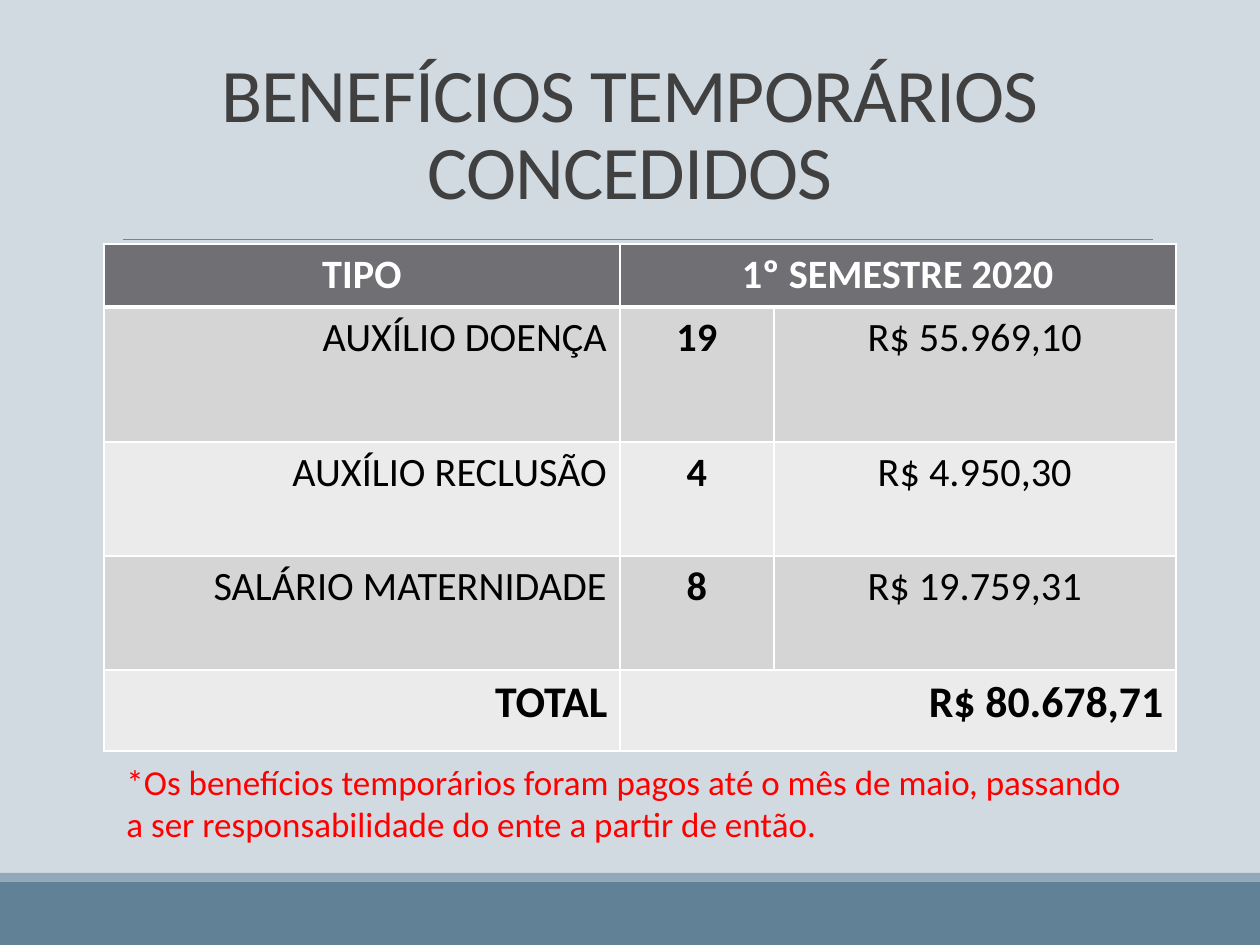
from pptx import Presentation
from pptx.dml.color import RGBColor
from pptx.enum.shapes import MSO_CONNECTOR as CONNECTOR, MSO_SHAPE as SHAPE
from pptx.enum.text import MSO_ANCHOR as ANCHOR, MSO_AUTO_SIZE as AUTO_SIZE, PP_ALIGN as ALIGN
from pptx.oxml.ns import qn
from pptx.util import Emu, Pt
from lxml.etree import SubElement

PX = 914400 // 126
FONT = "Calibri"
BACKGROUND = RGBColor(0xD1, 0xD9, 0xE1)
BAND = RGBColor(0x61, 0x81, 0x97)
BAND_EDGE = RGBColor(0x92, 0xA9, 0xB9)
RULE = RGBColor(0x80, 0x80, 0x80)
TITLE = RGBColor(0x40, 0x40, 0x40)
HEADER = RGBColor(0x6F, 0x6F, 0x74)
ROW_DARK = RGBColor(0xD5, 0xD5, 0xD6)
ROW_LIGHT = RGBColor(0xEB, 0xEB, 0xEB)
WHITE = RGBColor(0xFF, 0xFF, 0xFF)
BLACK = RGBColor(0, 0, 0)
RED = RGBColor(0xFF, 0, 0)


def box(*lengths):
    return [Emu(length * PX) for length in lengths]


def format_text(paragraph, size, color, bold=False, align=ALIGN.LEFT):
    font = paragraph.font
    font.name, font.size, font.bold = FONT, Pt(size), bold
    font.color.rgb = color
    paragraph.alignment = align


presentation = Presentation()
presentation.slide_width, presentation.slide_height = box(1260, 945)
slide = presentation.slides.add_slide(presentation.slide_layouts[5])
slide.background.fill.solid()
slide.background.fill.fore_color.rgb = BACKGROUND

# Footer bands
for top, height, color in [(882, 63, BAND), (873, 9, BAND_EDGE)]:
    band = slide.shapes.add_shape(SHAPE.RECTANGLE, *box(0, top, 1260, height))
    band.shadow.inherit = False
    band.fill.solid()
    band.fill.fore_color.rgb = color
    band.line.fill.background()

# Rule under the title
rule = slide.shapes.add_connector(CONNECTOR.STRAIGHT, *box(123, 239, 1153, 239))
rule.line.color.rgb = RULE
rule.line.width = Pt(0.5)
SubElement(rule._element.spPr, qn("a:effectLst"))

# Title
title = slide.shapes.title
title.left, title.top, title.width, title.height = box(0, 125, 1260, 96)
title.text_frame.auto_size = AUTO_SIZE.NONE
title.text_frame.vertical_anchor = ANCHOR.BOTTOM
paragraph = title.text_frame.paragraphs[0]
paragraph.text = "BENEFÍCIOS TEMPORÁRIOS\vCONCEDIDOS"
format_text(paragraph, 43.2, TITLE, align=ALIGN.CENTER)
paragraph.line_spacing = 0.85
for run in paragraph.runs:
    run.font._element.set("spc", "-50")

# Benefits table
ROWS = [
    ("TIPO", "1º SEMESTRE 2020", ""),
    ("AUXÍLIO DOENÇA", "19", "R$ 55.969,10"),
    ("AUXÍLIO RECLUSÃO", "4", "R$ 4.950,30"),
    ("SALÁRIO MATERNIDADE", "8", "R$ 19.759,31"),
    ("TOTAL", "R$ 80.678,71", ""),
]
COLUMN_WIDTHS = [516, 154, 402]
ROW_HEIGHTS = [63, 135, 114, 114, 81]
LAST = len(ROWS) - 1
table = slide.shapes.add_table(
    len(ROWS), len(COLUMN_WIDTHS),
    *box(104, 244, sum(COLUMN_WIDTHS), sum(ROW_HEIGHTS))).table
table.horz_banding = False
for column, width in zip(table.columns, COLUMN_WIDTHS):
    column.width = Emu(width * PX)
for row, height in zip(table.rows, ROW_HEIGHTS):
    row.height = Emu(height * PX)
for r in (0, LAST):
    table.cell(r, 1).merge(table.cell(r, 2))

for r, texts in enumerate(ROWS):
    for c, text in enumerate(texts):
        cell = table.cell(r, c)
        properties = cell._tc.get_or_add_tcPr()
        for side in "LRTB":
            thick = (r, side) in [(0, "B"), (1, "T")]
            border = SubElement(properties, qn(f"a:ln{side}"), w=str(Pt(3 if thick else 1)))
            fill = SubElement(border, qn("a:solidFill"))
            SubElement(fill, qn("a:srgbClr"), val=str(WHITE))
        cell.fill.solid()
        cell.fill.fore_color.rgb = HEADER if r == 0 else ROW_DARK if r % 2 else ROW_LIGHT
        if not text:
            continue
        paragraph = cell.text_frame.paragraphs[0]
        paragraph.text = text
        right = r > 0 and (c == 0 or r == LAST)
        format_text(paragraph, 25 if r == LAST else 23, BLACK if r else WHITE,
                    bold=r in (0, LAST) or c == 1,
                    align=ALIGN.RIGHT if right else ALIGN.CENTER)

# Footnote
note = slide.shapes.add_textbox(*box(114, 754, 1142, 97)).text_frame
note.word_wrap = True
note.text = ("*Os benefícios temporários foram pagos até o mês de maio, passando\n"
             "a ser responsabilidade do ente a partir de então.")
for paragraph in note.paragraphs:
    format_text(paragraph, 20, RED)

presentation.save("out.pptx")
